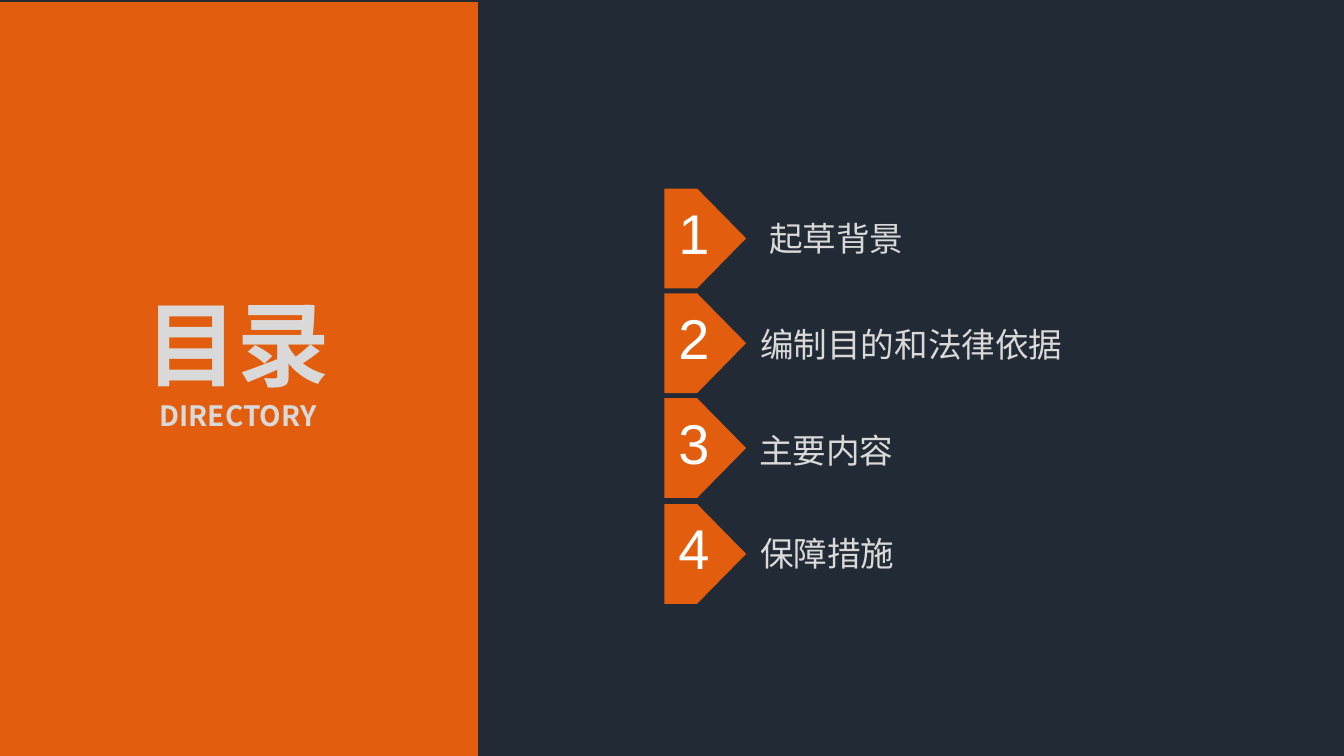
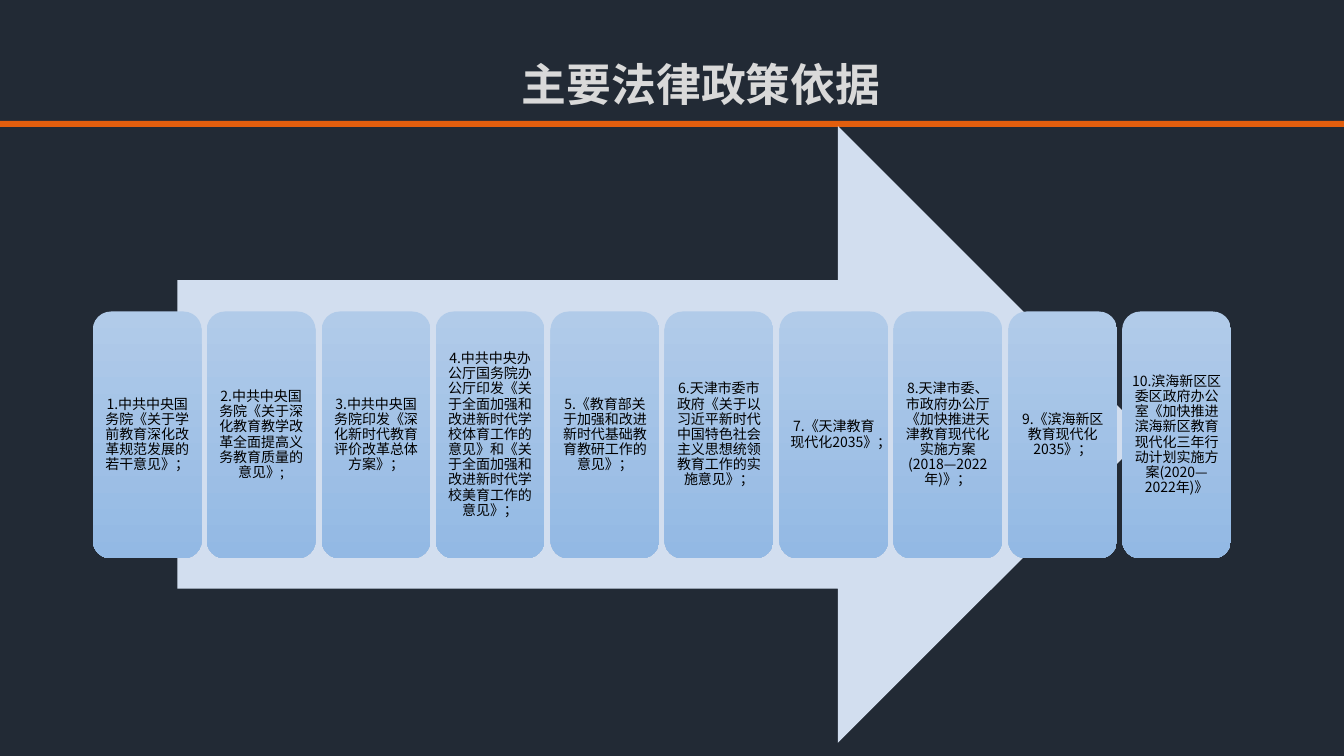
from dataclasses import dataclass

from lxml.etree import SubElement
from pptx import Presentation
from pptx.dml.color import RGBColor
from pptx.enum.lang import MSO_LANGUAGE_ID as Language
from pptx.enum.shapes import MSO_SHAPE as Preset
from pptx.enum.text import MSO_ANCHOR as Anchor, PP_ALIGN as Align
from pptx.oxml.ns import qn
from pptx.presentation import Presentation as Deck
from pptx.shapes.autoshape import Shape
from pptx.slide import Slide
from pptx.text.text import TextFrame
from pptx.util import Emu, Pt

EMU_PER_PX = 9144
SLIDE_WIDTH, SLIDE_HEIGHT = 1333, 750
BLANK_LAYOUT = 6

NAVY = RGBColor(0x22, 0x2A, 0x35)
ORANGE = RGBColor(0xE2, 0x5E, 0x0E)
LIGHT_GRAY = RGBColor(0xD9, 0xD9, 0xD9)
WHITE = RGBColor(0xFF, 0xFF, 0xFF)
BLACK = RGBColor(0x00, 0x00, 0x00)
PALE_BLUE = RGBColor(0xD2, 0xDE, 0xEF)
CARD_TOP_BLUE = RGBColor(0xB1, 0xCB, 0xE9)
CARD_BOTTOM_BLUE = RGBColor(0x93, 0xB9, 0xE4)

CHINESE_FONT = "Noto Sans CJK SC"
NUMBER_FONT = "Arial"


@dataclass(frozen=True)
class Box:
    left: int
    top: int
    width: int
    height: int

    def emu(self) -> tuple[Emu, Emu, Emu, Emu]:
        return px(self.left), px(self.top), px(self.width), px(self.height)


@dataclass(frozen=True)
class TextStyle:
    size: int
    color: RGBColor
    font: str = CHINESE_FONT
    bold: bool = False


@dataclass(frozen=True)
class Run:
    text: str
    style: TextStyle


@dataclass(frozen=True)
class Chapter:
    title: str
    box: Box


HEADING = TextStyle(32, LIGHT_GRAY, bold=True)
CONTENTS_HEADING = TextStyle(66, LIGHT_GRAY, bold=True)
CONTENTS_SUBHEADING = TextStyle(20, LIGHT_GRAY, bold=True)
CHAPTER_TITLE = TextStyle(24, LIGHT_GRAY)
CHAPTER_NUMBER = TextStyle(40, WHITE, NUMBER_FONT)
CARD_TEXT = TextStyle(10, BLACK)

CHAPTERS = (
    Chapter("起草背景", Box(753, 211, 309, 51)),
    Chapter("编制目的和法律依据", Box(744, 316, 360, 50)),
    Chapter("主要内容", Box(743, 422, 400, 50)),
    Chapter("保障措施", Box(744, 524, 309, 51)),
)

POLICIES = (
    "1.中共中央国务院《关于学前教育深化改革规范发展的若干意见》；",
    "2.中共中央国务院《关于深化教育教学改革全面提高义务教育质量的意见》;",
    "3.中共中央国务院印发《深化新时代教育评价改革总体方案》；",
    "4.中共中央办公厅国务院办公厅印发《关于全面加强和改进新时代学校体育工作的意见》"
    "和《关于全面加强和改进新时代学校美育工作的意见》；",
    "5.《教育部关于加强和改进新时代基础教育教研工作的意见》；",
    "6.天津市委市政府《关于以习近平新时代中国特色社会主义思想统领教育工作的实施意见》；",
    "7.《天津教育现代化2035》；",
    "8.天津市委、市政府办公厅《加快推进天津教育现代化实施方案(2018—2022年)》；",
    "9.《滨海新区教育现代化2035》；",
    "10.滨海新区区委区政府办公室《加快推进滨海新区教育现代化三年行动计划实施方案"
    "(2020—2022年)》",
)


def px(length: int) -> Emu:
    return Emu(length * EMU_PER_PX)


def add_slide(presentation: Deck) -> Slide:
    slide = presentation.slides.add_slide(presentation.slide_layouts[BLANK_LAYOUT])
    fill = slide.background.fill
    fill.solid()
    fill.fore_color.rgb = NAVY
    return slide


def add_preset(slide: Slide, preset: Preset, box: Box, color: RGBColor) -> Shape:
    shape = slide.shapes.add_shape(preset, *box.emu())
    shape.shadow.inherit = False
    shape.line.fill.background()
    shape.fill.solid()
    shape.fill.fore_color.rgb = color
    return shape


def write_runs(frame: TextFrame, runs: list[Run], align: Align) -> None:
    paragraph = frame.paragraphs[0]
    paragraph.alignment = align
    for item in runs:
        run = paragraph.add_run()
        run.text = item.text
        font = run.font
        font.size = Pt(item.style.size)
        font.bold = item.style.bold
        font.color.rgb = item.style.color
        font.name = item.style.font
        font.language_id = Language.SIMPLIFIED_CHINESE
        properties = run._r.get_or_add_rPr()
        SubElement(properties, qn("a:ea")).set("typeface", item.style.font)


def set_margins(frame: TextFrame, margin: int) -> None:
    frame.margin_left = frame.margin_right = px(margin)
    frame.margin_top = frame.margin_bottom = px(margin)


def add_text(
    slide: Slide,
    box: Box,
    runs: list[Run],
    align: Align = Align.LEFT,
    anchor: Anchor = Anchor.TOP,
    wrap: bool = True,
) -> TextFrame:
    frame = slide.shapes.add_textbox(*box.emu()).text_frame
    frame.word_wrap = wrap
    frame.vertical_anchor = anchor
    write_runs(frame, runs, align)
    return frame


def add_chapter(slide: Slide, index: int, chapter: Chapter) -> None:
    top = 187 + index * 313 // 3
    badge = add_preset(slide, Preset.PENTAGON, Box(659, top, 81, 99), ORANGE)
    badge.adjustments[0] = 0.6
    number = Run(str(index + 1), CHAPTER_NUMBER)
    add_text(slide, Box(663, top + 5, 48, 90), [number], wrap=False)
    add_text(slide, chapter.box, [Run(chapter.title, CHAPTER_TITLE)])


def add_policy_card(slide: Slide, index: int, policy: str) -> None:
    box = Box(92 + index * 227 // 2, 309, 108, 245)
    card = add_preset(slide, Preset.ROUNDED_RECTANGLE, box, CARD_TOP_BLUE)
    card.fill.gradient()
    card.fill.gradient_angle = 270
    for stop, color in zip(card.fill.gradient_stops, (CARD_TOP_BLUE, CARD_BOTTOM_BLUE)):
        stop.color.rgb = color
    frame = card.text_frame
    frame.word_wrap = True
    frame.vertical_anchor = Anchor.MIDDLE
    set_margins(frame, 4)
    write_runs(frame, [Run(policy, CARD_TEXT)], Align.CENTER)
    frame.paragraphs[0].line_spacing = 0.9


def build_contents(presentation: Deck) -> None:
    slide = add_slide(presentation)
    add_preset(slide, Preset.RECTANGLE, Box(0, 2, 474, 748), ORANGE)
    heading = [Run("目录", CONTENTS_HEADING), Run("DIRECTORY", CONTENTS_SUBHEADING)]
    add_text(slide, Box(58, 227, 356, 259), heading, Align.CENTER, Anchor.MIDDLE)
    for index, chapter in enumerate(CHAPTERS):
        add_chapter(slide, index, chapter)


def build_policies(presentation: Deck) -> None:
    slide = add_slide(presentation)
    heading = [Run("主要法律政策依据", HEADING)]
    set_margins(add_text(slide, Box(207, 56, 977, 54), heading, Align.CENTER), 0)
    add_preset(slide, Preset.RECTANGLE, Box(0, 120, SLIDE_WIDTH, 6), ORANGE)
    add_preset(slide, Preset.RIGHT_ARROW, Box(176, 125, 961, 612), PALE_BLUE)
    for index, policy in enumerate(POLICIES):
        add_policy_card(slide, index, policy)


def main() -> None:
    presentation = Presentation()
    presentation.slide_width = px(SLIDE_WIDTH)
    presentation.slide_height = px(SLIDE_HEIGHT)
    build_contents(presentation)
    build_policies(presentation)
    presentation.save("out.pptx")


if __name__ == "__main__":
    main()
